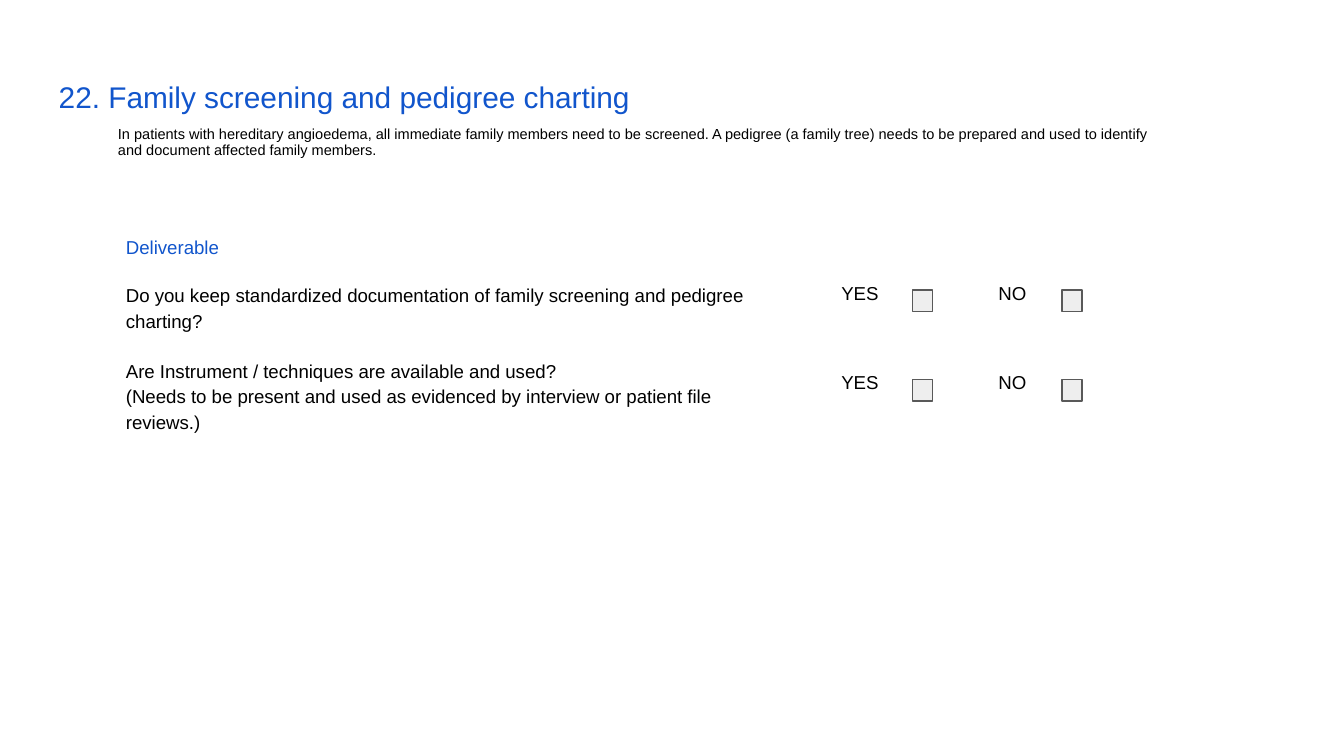
from lxml.etree import SubElement
from pptx import Presentation
from pptx.dml.color import RGBColor
from pptx.enum.shapes import MSO_SHAPE as SHAPE
from pptx.enum.text import MSO_ANCHOR as ANCHOR, MSO_AUTO_SIZE as FIT, PP_ALIGN as ALIGN
from pptx.oxml.ns import qn
from pptx.util import Cm, Pt

BLUE, BLACK, GRAY, PALE = "1155CC", "000000", "595959", "EEEEEE"


def rgb(value):
    return RGBColor.from_string(value)


def write(p, text, font="Arial", size=10, color=BLACK, spacing=1.15, before=6, after=12):
    """Fill a paragraph; a vertical tab in the text is a line break."""
    p.text = text
    p.alignment = ALIGN.LEFT
    p.line_spacing = spacing
    p.space_before, p.space_after = Pt(before), Pt(after)
    for r in p.runs:
        r.font.name, r.font.size = font, Pt(size)
        r.font.color.rgb = rgb(color)
    for br in p._p.findall(qn("a:br")):
        SubElement(br, qn("a:rPr"), sz=str(size * 100))


class Form:
    """The current slide and the style of its elements."""
    inset = Cm(0.25)
    box_width, box_height = Cm(0.38), Cm(0.41)

    def __init__(self, prs):
        self.s = prs.slides.add_slide(prs.slide_layouts[5])

    def frame(self, sp):
        tf = sp.text_frame
        tf.word_wrap = True
        tf.auto_size = FIT.NONE
        tf.vertical_anchor = ANCHOR.TOP
        tf.margin_left = tf.margin_right = self.inset
        tf.margin_top = tf.margin_bottom = self.inset
        return tf

    def title(self, text, x, y, w, h):
        sp = self.s.shapes.title
        sp.left, sp.top, sp.width, sp.height = Cm(x), Cm(y), Cm(w), Cm(h)
        write(self.frame(sp).paragraphs[0], text, size=16, color=BLUE,
              spacing=1.0, before=0, after=0)

    def text(self, x, y, w, h, *paragraphs):
        """Add a text box; each paragraph is (text, format)."""
        tf = self.frame(self.s.shapes.add_textbox(Cm(x), Cm(y), Cm(w), Cm(h)))
        for i, (text, style) in enumerate(paragraphs):
            write(tf.add_paragraph() if i else tf.paragraphs[0], text, **style)

    def checkbox(self, x, y):
        sp = self.s.shapes.add_shape(SHAPE.RECTANGLE, Cm(x), Cm(y),
                                     self.box_width, self.box_height)
        sp.shadow.inherit = False
        sp.fill.solid()
        sp.fill.fore_color.rgb = rgb(PALE)
        sp.line.color.rgb = rgb(GRAY)
        sp.line.width = Pt(0.75)

    def answer(self, label, x, y, box_x):
        self.text(x, y, 1.27, 0.94, (label, {}))
        self.checkbox(box_x, y + 0.47)


def main():
    prs = Presentation()
    prs.slide_width, prs.slide_height = Cm(25.4), Cm(14.29)
    form = Form(prs)

    # Heading and introduction
    form.title("22. Family screening and pedigree charting", 0.86, 1.24, 23.67, 1.27)
    form.text(1.98, 2.13, 20.45, 1.57, (
        "In patients with hereditary angioedema, all immediate family members need to be "
        "screened. A pedigree (a family tree) needs to be prepared and used to identify and "
        "document affected family members.", dict(size=7.8, spacing=0.95, before=0)))

    # Questions
    form.text(2.13, 4.14, 12.88, 2.36,
              ("Deliverable", dict(color=BLUE, after=0)),
              ("Do you keep standardized documentation of family screening and pedigree "
               "charting?", dict(before=12)))
    form.text(2.13, 6.48, 12.88, 1.93, (
        "Are Instrument / techniques are available and used? \v(Needs to be present and used "
        "as evidenced by interview or patient file reviews.)", {}))

    # Answers, one row per question
    for y in (5.01, 6.7):
        for label, x, box_x in (("YES", 15.65, 17.25), ("NO", 18.62, 20.07)):
            form.answer(label, x, y, box_x)

    prs.save("out.pptx")


if __name__ == "__main__":
    main()
